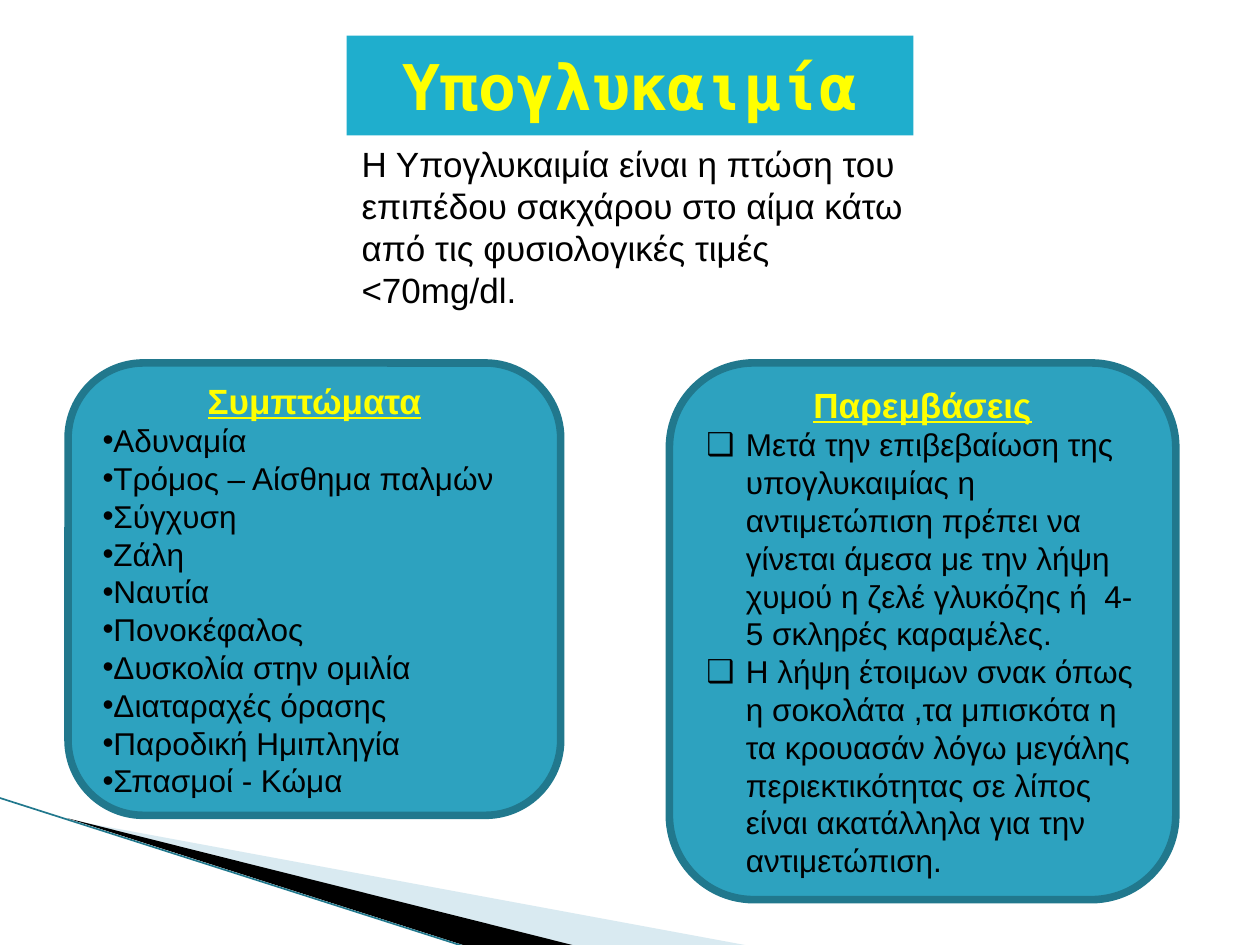
from lxml import etree
from pptx import Presentation
from pptx.dml.color import RGBColor
from pptx.enum.shapes import MSO_CONNECTOR, MSO_SHAPE
from pptx.enum.text import MSO_ANCHOR, MSO_AUTO_SIZE, PP_ALIGN
from pptx.oxml.ns import qn
from pptx.util import Pt

ROUNDED = MSO_SHAPE.ROUNDED_RECTANGLE
STRAIGHT = MSO_CONNECTOR.STRAIGHT
MIDDLE = MSO_ANCHOR.MIDDLE
LEFT, CENTER = PP_ALIGN.LEFT, PP_ALIGN.CENTER

BLACK = RGBColor(0x00, 0x00, 0x00)
YELLOW = RGBColor(0xFF, 0xFF, 0x00)
TITLE_FILL = RGBColor(0x1F, 0xAE, 0xCD)
PANEL_FILL = RGBColor(0x2D, 0xA2, 0xBF)
DARK_TEAL = RGBColor(0x21, 0x78, 0x8D)
PALE_BLUE = RGBColor(0xA0, 0xCB, 0xDC)

BODY_FONT = "Arial"
TITLE_FONT = "DejaVu Sans Mono"

TITLE = "Υπογλυκαιμία"
DEFINITION = (
    "Η Υπογλυκαιμία είναι η πτώση του επιπέδου σακχάρου στο αίμα κάτω "
    "από τις φυσιολογικές τιμές <70mg/dl."
)
PANEL_TOP = 207.4
PANELS = [
    {
        "heading": "Συμπτώματα",
        "left": 38.9, "width": 281.5, "height": 258.5,
        "bullet": "•", "indent": 0,
        "items": [
            "Αδυναμία",
            "Τρόμος – Αίσθημα παλμών",
            "Σύγχυση",
            "Ζάλη",
            "Ναυτία",
            "Πονοκέφαλος",
            "Δυσκολία στην ομιλία",
            "Διαταραχές όρασης",
            "Παροδική Ημιπληγία",
            "Σπασμοί - Κώμα",
        ],
    },
    {
        "heading": "Παρεμβάσεις",
        "left": 382.5, "width": 289.4, "height": 306.7,
        "bullet": "❑", "indent": 22.5,
        "items": [
            "Μετά την επιβεβαίωση της υπογλυκαιμίας η αντιμετώπιση πρέπει να "
            "γίνεται άμεσα με την λήψη χυμού η ζελέ γλυκόζης ή  4-5 σκληρές "
            "καραμέλες.",
            "Η λήψη έτοιμων σνακ όπως η σοκολάτα ,τα μπισκότα η τα κρουασάν "
            "λόγω μεγάλης περιεκτικότητας σε λίπος είναι ακατάλληλα για την "
            "αντιμετώπιση.",
        ],
    },
]
WEDGES = [
    (PALE_BLUE, 40, [(39.6, 468.5), (428.4, 540.5), (328.3, 540.5)]),
    (BLACK, 100, [(38.2, 467.5), (329, 540.5), (267.8, 541)]),
]
EDGE_LINE = (-0.7, 455.8, 267.1, 541.4)


def points(*values):
    return [Pt(value) for value in values]


def format_paragraph(paragraph, text, size, color, alignment=LEFT,
                     font_name=BODY_FONT, bold=False, underline=False):
    paragraph.text = text
    paragraph.alignment = alignment
    font = paragraph.font
    font.name, font.size = font_name, Pt(size)
    font.bold, font.underline = bold, underline
    font.color.rgb = color


def add_bullet(paragraph, character, indent):
    properties = paragraph._p.get_or_add_pPr()
    properties.set("marL", str(Pt(indent)))
    properties.set("indent", str(-Pt(indent)))
    etree.SubElement(properties, qn("a:buFont")).set("typeface", BODY_FONT)
    etree.SubElement(properties, qn("a:buChar")).set("char", character)


def add_wedge(slide, color, opacity, corners):
    start, *others = [points(*corner) for corner in corners]
    builder = slide.shapes.build_freeform(*start)
    builder.add_line_segments(others, close=True)
    wedge = builder.convert_to_shape()
    wedge.shadow.inherit = False
    wedge.line.fill.background()
    wedge.fill.solid()
    wedge.fill.fore_color.rgb = color
    if opacity < 100:
        color_element = wedge._element.spPr.find(qn("a:solidFill"))[0]
        etree.SubElement(color_element, qn("a:alpha")).set("val", str(opacity * 1000))


def add_edge_line(slide):
    line = slide.shapes.add_connector(STRAIGHT, *points(*EDGE_LINE))
    line.line.color.rgb = DARK_TEAL
    line.line.width = Pt(0.95)
    etree.SubElement(line._element.spPr, qn("a:effectLst"))


def fill_title(slide):
    title = slide.shapes.title
    title.left, title.top, title.width, title.height = points(198, 20.4, 324, 57)
    title.fill.solid()
    title.fill.fore_color.rgb = TITLE_FILL
    frame = title.text_frame
    frame.auto_size = MSO_AUTO_SIZE.NONE
    frame.vertical_anchor = MIDDLE
    format_paragraph(frame.paragraphs[0], TITLE, 36, YELLOW, CENTER, TITLE_FONT, bold=True)


def add_definition(slide):
    box = slide.shapes.add_textbox(*points(199.5, 77.8, 326, 128))
    frame = box.text_frame
    frame.word_wrap = True
    frame.auto_size = MSO_AUTO_SIZE.SHAPE_TO_FIT_TEXT
    format_paragraph(frame.paragraphs[0], DEFINITION, 20, BLACK)


def add_panel(slide, panel):
    shape = slide.shapes.add_shape(
        ROUNDED, *points(panel["left"], PANEL_TOP, panel["width"], panel["height"]))
    shape.shadow.inherit = False
    shape.fill.solid()
    shape.fill.fore_color.rgb = PANEL_FILL
    shape.line.color.rgb = DARK_TEAL
    shape.line.width = Pt(4.33)
    frame = shape.text_frame
    frame.word_wrap = True
    frame.vertical_anchor = MIDDLE
    format_paragraph(frame.paragraphs[0], panel["heading"], 20, YELLOW, CENTER,
                     bold=True, underline=True)
    for item in panel["items"]:
        paragraph = frame.add_paragraph()
        add_bullet(paragraph, panel["bullet"], panel["indent"])
        format_paragraph(paragraph, item, 18, BLACK)


def main():
    presentation = Presentation()
    presentation.slide_width, presentation.slide_height = points(720, 540)
    slide = presentation.slides.add_slide(presentation.slide_layouts[5])
    for wedge in WEDGES:
        add_wedge(slide, *wedge)
    add_edge_line(slide)
    fill_title(slide)
    for panel in PANELS:
        add_panel(slide, panel)
    add_definition(slide)
    presentation.save("out.pptx")


if __name__ == "__main__":
    main()
